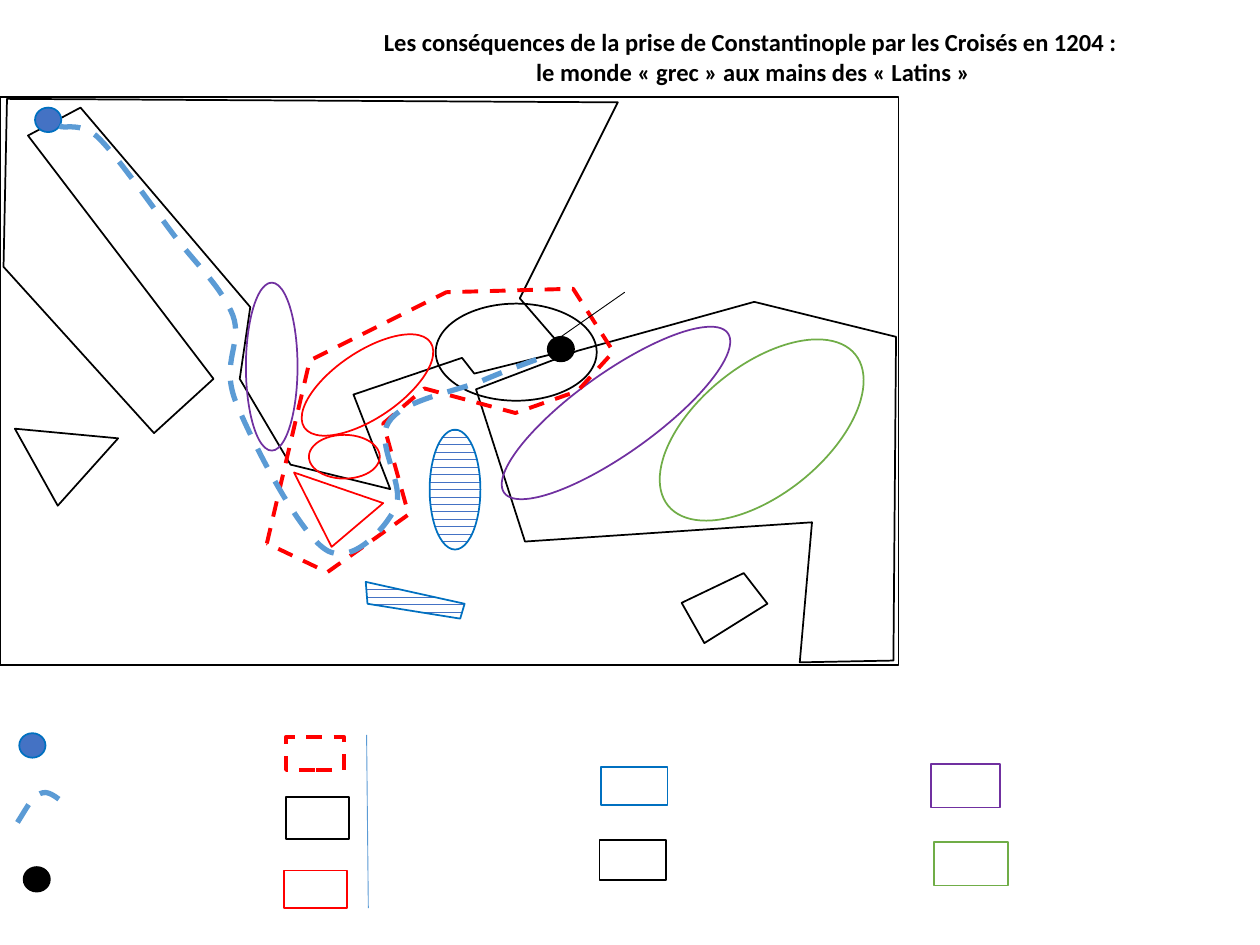
from lxml import etree
from pptx import Presentation
from pptx.dml.color import RGBColor
from pptx.enum.dml import MSO_LINE, MSO_PATTERN
from pptx.enum.shapes import MSO_CONNECTOR, MSO_SHAPE
from pptx.enum.text import MSO_ANCHOR, MSO_AUTO_SIZE, PP_ALIGN
from pptx.oxml.ns import qn
from pptx.util import Pt

DASH = MSO_LINE.DASH
HATCH = MSO_PATTERN.DASHED_HORIZONTAL
OVAL = MSO_SHAPE.OVAL
RECTANGLE = MSO_SHAPE.RECTANGLE
STRAIGHT = MSO_CONNECTOR.STRAIGHT
CENTER = PP_ALIGN.CENTER
TOP = MSO_ANCHOR.TOP
FIT_SHAPE = MSO_AUTO_SIZE.SHAPE_TO_FIT_TEXT

BLACK, WHITE, RED = "000000", "FFFFFF", "FF0000"
PURPLE, GREEN, BLUE = "7030A0", "70AD47", "0070C0"
SEA_ROUTE, VENETIAN = "5B9BD5", "4472C4"
DOT_SIZE = (15, 14)

TITLE = [
    "Les conséquences de la prise de Constantinople par les Croisés en 1204 : ",
    "le monde « grec » aux mains des « Latins »",
]


def rgb(color):
    return RGBColor.from_string(color)


def style(shape, color, width=1, dash=None, fill=None, hatched=False):
    shape.shadow.inherit = False
    shape.line.color.rgb = rgb(color)
    shape.line.width = Pt(width)
    if dash:
        shape.line.dash_style = dash
    if hatched:
        shape.fill.patterned()
        shape.fill.pattern = HATCH
        shape.fill.fore_color.rgb = rgb(VENETIAN)
        shape.fill.back_color.rgb = rgb(WHITE)
    elif fill:
        shape.fill.solid()
        shape.fill.fore_color.rgb = rgb(fill)
    else:
        shape.fill.background()


def add_preset(slide, box, kind, area, color, rotation=0, **look):
    x, y, width, height = area
    shape = slide.shapes.add_shape(
        kind, Pt(box[0] + x), Pt(box[1] + y), Pt(width), Pt(height))
    shape.rotation = rotation
    style(shape, color, **look)


def add_dot(slide, box, corner, color, fill):
    add_preset(slide, box, OVAL, (*corner, *DOT_SIZE), color, fill=fill)


def trace(slide, box, points, close):
    placed = [(Pt(box[0] + x), Pt(box[1] + y)) for x, y in points]
    builder = slide.shapes.build_freeform(*placed[0], scale=1.0)
    builder.add_line_segments(placed[1:], close=close)
    return builder.convert_to_shape()


def add_polygon(slide, box, points, color, **look):
    style(trace(slide, box, points, True), color, **look)


def add_sea_route(slide, box, start, curves):
    """Draw a dashed line; each curve is two control points and an end."""
    shape = trace(slide, box, [start] + [curve[2] for curve in curves], False)
    segments = list(shape.element.iter(qn("a:lnTo")))
    for segment, curve in zip(segments, curves):
        segment.tag = qn("a:cubicBezTo")
        for position, (x, y) in enumerate(curve[:2]):
            control = etree.Element(qn("a:pt"))
            control.set("x", str(Pt(box[0] + x) - shape.left))
            control.set("y", str(Pt(box[1] + y) - shape.top))
            segment.insert(position, control)
    style(shape, SEA_ROUTE, width=3, dash=DASH)


def add_thin_line(slide, box, start, end, color):
    line = slide.shapes.add_connector(
        STRAIGHT, Pt(box[0] + start[0]), Pt(box[1] + start[1]),
        Pt(box[0] + end[0]), Pt(box[1] + end[1]))
    line.line.color.rgb = rgb(color)
    line.line.width = Pt(0.5)
    etree.SubElement(line.element.spPr, qn("a:effectLst"))


def add_title(slide, box):
    title = slide.shapes.title
    title.left, title.top, title.width, title.height = map(Pt, box)
    frame = title.text_frame
    frame.word_wrap = False
    frame.auto_size = FIT_SHAPE
    frame.vertical_anchor = TOP
    for index, wording in enumerate(TITLE):
        paragraph = frame.add_paragraph() if index else frame.paragraphs[0]
        paragraph.alignment = CENTER
        paragraph.space_before = Pt(0)
        run = paragraph.add_run()
        run.text = wording
        run.font.name = "Calibri"
        run.font.size = Pt(14)
        run.font.bold = True
        run.font.color.rgb = rgb(BLACK)


def add_map(slide, box):
    europe = [(2, 97), (88, 192), (122, 161), (16, 22), (46, 6), (143, 120),
              (137, 161), (166, 210), (223, 224), (202, 170), (264, 149),
              (271, 158), (323, 145), (297, 115), (353, 3), (4, 1)]
    anatolia = [(272, 167), (330, 145), (431, 117), (512, 137), (510.5, 322),
                (457, 323), (464, 243), (300, 254)]
    sicily = [(8.5, 189.5), (67.5, 195), (33, 233.5)]
    cyprus = [(389.5, 289), (402.5, 312), (438.5, 289.5), (425, 272)]
    peloponnese = [(168, 214.5), (219, 232), (189.5, 257)]
    crete = [(209, 277), (210, 289.5), (263, 298), (265.5, 289.5)]
    latin_border = [(152.5, 255), (177, 150.5), (255, 111.5), (327.5, 109.5),
                    (350.5, 145.5), (330, 168), (294.5, 180.5), (242.5, 166.5),
                    (219, 186.5), (233.5, 238.5), (187, 271.5)]
    crusade = [
        ((36, 18.5), (47, 13.5), (57, 24)),
        ((67.5, 34.5), (87, 62.5), (99.5, 79)),
        ((112.5, 96), (126.5, 108.5), (133, 124.5)),
        ((139, 140.5), (126, 151), (134.5, 173.5)),
        ((143.5, 196), (170.5, 248.5), (186, 258.5)),
        ((201, 268.5), (220.5, 246), (226, 234.5)),
        ((232, 222.5), (214, 197.5), (222, 186)),
        ((229, 173.5), (259, 168.5), (274.5, 162.5)),
        ((289.5, 156), (300, 152.5), (313, 147.5)),
    ]
    states = [
        ((249, 118, 92, 55.5), BLACK, 0),
        ((166.5, 145.5, 87, 38), RED, 326),
        ((176.5, 193, 40.5, 25), RED, 0),
        ((140.5, 106, 29.5, 96), PURPLE, 0),
        ((273.5, 157.5, 157, 46), PURPLE, 324.5),
        ((366.5, 153.5, 137.5, 73.5), GREEN, 321.1),
    ]
    add_preset(slide, box, RECTANGLE, (0, 0, *box[2:]), BLACK)
    for land in (europe, anatolia, sicily, cyprus):
        add_polygon(slide, box, land, BLACK)
    for area, color, rotation in states:
        add_preset(slide, box, OVAL, area, color, rotation)
    add_polygon(slide, box, peloponnese, RED)
    add_polygon(slide, box, crete, BLUE, hatched=True)
    add_preset(slide, box, OVAL, (245.5, 190, 29, 68.5), BLUE, hatched=True)
    add_dot(slide, box, (20, 6), BLUE, VENETIAN)
    add_dot(slide, box, (313, 137), BLACK, BLACK)
    add_polygon(slide, box, latin_border, RED, width=2.25, dash=DASH)
    add_sea_route(slide, box, (34, 16.5), crusade)
    add_thin_line(slide, box, (357, 111.5), (320.5, 137), BLACK)


def add_legend(slide, box):
    keys = [
        ((163.5, 36.5, 36, 24), BLACK),
        ((162.5, 78.5, 36, 21.5), RED),
        ((343.5, 19.5, 38, 21.5), BLUE),
        ((342.5, 61, 38, 23), BLACK),
        ((532, 17.5, 39.5, 25), PURPLE),
        ((533.5, 62, 42.5, 25), GREEN),
    ]
    add_dot(slide, box, (11, 0), BLUE, VENETIAN)
    add_sea_route(slide, box, (10, 51), [
        ((14.5, 44), (18.5, 36), (23, 34.5)),
        ((27.5, 32.5), (31, 36), (35.5, 39)),
    ])
    add_dot(slide, box, (13.5, 76.5), BLACK, BLACK)
    add_preset(slide, box, RECTANGLE, (163.5, 2, 33, 19), RED,
               width=2.25, dash=DASH)
    for area, color in keys:
        add_preset(slide, box, RECTANGLE, area, color)
    add_thin_line(slide, box, (209.5, 1), (210.5, 100), SEA_ROUTE)


def main():
    deck = Presentation()
    deck.slide_width, deck.slide_height = Pt(720), Pt(540)
    slide = deck.slides.add_slide(deck.slide_layouts[5])
    add_title(slide, (211, 12, 439, 41))
    add_map(slide, (0, 55.5, 513.5, 324.5))
    add_legend(slide, (0, 419, 720, 101))
    deck.save("out.pptx")


if __name__ == "__main__":
    main()
